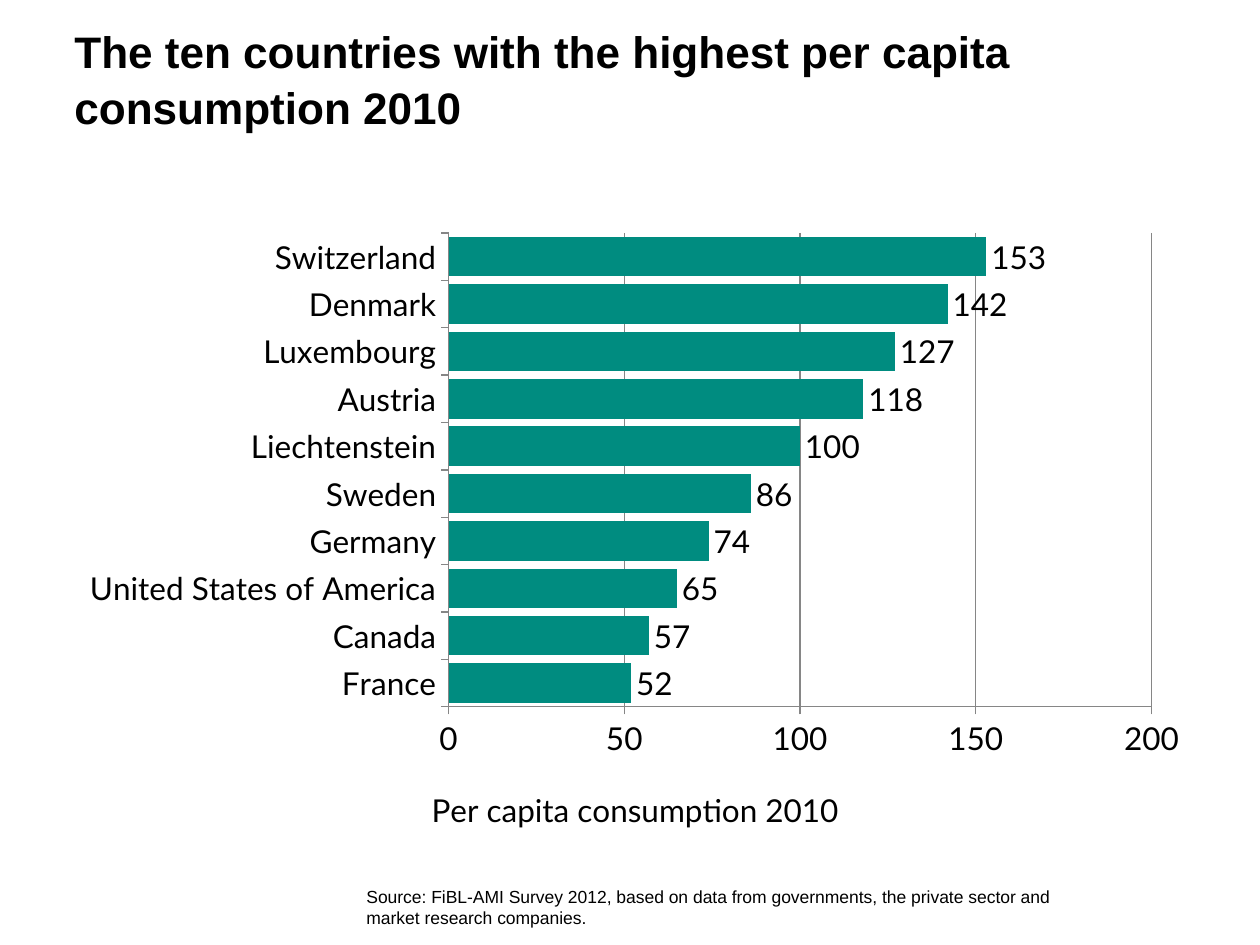
from dataclasses import dataclass

from lxml.etree import SubElement
from pptx import Presentation
from pptx.chart.data import CategoryChartData
from pptx.dml.color import RGBColor
from pptx.enum.chart import XL_CHART_TYPE, XL_LABEL_POSITION, XL_TICK_MARK
from pptx.enum.text import MSO_ANCHOR, MSO_AUTO_SIZE, PP_ALIGN
from pptx.oxml.ns import qn
from pptx.util import Inches, Pt

CONSUMPTION = {
    "France": 52,
    "Canada": 57,
    "United States of America": 65,
    "Germany": 74,
    "Sweden": 86,
    "Liechtenstein": 100,
    "Austria": 118,
    "Luxembourg": 127,
    "Denmark": 142,
    "Switzerland": 153,
}


@dataclass(frozen=True)
class Theme:
    """Colours, fonts and type sizes of the slide."""
    text: RGBColor = RGBColor(0, 0, 0)
    bar: RGBColor = RGBColor(0x00, 0x8C, 0x80)
    axis: RGBColor = RGBColor(0x86, 0x86, 0x86)
    body_font: str = "Arial"
    chart_font: str = "Lato"
    title_size: float = 25.2
    chart_size: float = 18
    source_size: float = 10
    hairline: float = 0.75


def apply(target, values):
    """Set every attribute named in values on target."""
    for name, value in values.items():
        setattr(target, name, value)


def place(part, **fractions):
    """Give a chart part a manual layout in fractions of the chart."""
    layout = part.find(qn("c:layout"))
    if layout is None:
        layout = SubElement(part, qn("c:layout"))
        text = part.find(qn("c:tx"))
        part.insert(0 if text is None else 1, layout)
    for child in list(layout):
        layout.remove(child)
    manual = SubElement(layout, qn("c:manualLayout"))
    for name, value in fractions.items():
        SubElement(manual, qn(f"c:{name}")).set("val", str(value))


class SlideBuilder:
    """Holds the theme and the current slide."""

    def __init__(self, slide, theme):
        self.slide, self.theme = slide, theme

    def style(self, font, name, size, bold=False):
        """Format a font in the text colour."""
        apply(font, {"name": name, "size": Pt(size), "bold": bold})
        font.color.rgb = self.theme.text

    def rule(self, line):
        """Format an axis or grid line."""
        line.color.rgb = self.theme.axis
        line.width = Pt(self.theme.hairline)

    def set_text(self, box, text, size, bold=False, **frame_format):
        """Fill a box with one left-aligned paragraph."""
        frame = box.text_frame
        apply(frame, {"word_wrap": True, **frame_format})
        para = frame.paragraphs[0]
        para.alignment = PP_ALIGN.LEFT
        span = para.add_run()
        span.text = text
        self.style(span.font, self.theme.body_font, size, bold)
        return para

    def title(self, text, left, top, width, height):
        """Move and fill the title placeholder."""
        box = self.slide.shapes.title
        apply(box, {"left": left, "top": top, "width": width, "height": height})
        para = self.set_text(
            box, text, self.theme.title_size, True,
            vertical_anchor=MSO_ANCHOR.MIDDLE, auto_size=MSO_AUTO_SIZE.NONE,
            margin_left=0, margin_top=0,
            margin_right=Inches(0.1), margin_bottom=Inches(0.05))
        para.line_spacing = 1.05

    def source(self, text, *bounds):
        """Add the source note."""
        box = self.slide.shapes.add_textbox(*bounds)
        self.set_text(box, text, self.theme.source_size,
                      auto_size=MSO_AUTO_SIZE.SHAPE_TO_FIT_TEXT)

    def bar_chart(self, values, axis_title, *bounds):
        """Add the horizontal bar chart."""
        theme = self.theme
        data = CategoryChartData(number_format="#,##0")
        data.categories = list(values)
        data.add_series("Series 1", list(values.values()))
        chart = self.slide.shapes.add_chart(
            XL_CHART_TYPE.BAR_CLUSTERED, *bounds, data).chart
        apply(chart, {"has_legend": False, "has_title": False})
        self.style(chart.font, theme.chart_font, theme.chart_size)

        plot = chart.plots[0]
        apply(plot, {"gap_width": 20, "vary_by_categories": False,
                     "has_data_labels": True})
        apply(plot.data_labels, {
            "show_value": True, "position": XL_LABEL_POSITION.OUTSIDE_END,
            "number_format": "#,##0", "number_format_is_linked": False})
        fill = plot.series[0].format.fill
        fill.solid()
        fill.fore_color.rgb = theme.bar

        amounts = chart.value_axis
        apply(amounts, {"minimum_scale": 0, "maximum_scale": 200,
                        "major_unit": 50, "has_major_gridlines": True})
        apply(amounts.tick_labels, {"number_format": "#,##0",
                                    "number_format_is_linked": False})
        for axis in (chart.category_axis, amounts):
            axis.major_tick_mark = XL_TICK_MARK.OUTSIDE
            self.rule(axis.format.line)
        self.rule(amounts.major_gridlines.format.line)

        frame = amounts.axis_title.text_frame
        frame.text = axis_title
        span = frame.paragraphs[0].runs[0]
        self.style(span.font, theme.chart_font, theme.chart_size)
        place(amounts._element.find(qn("c:title")),
              xMode="edge", yMode="edge", x=0.32, y=0.9)
        place(chart._chartSpace.chart.plotArea, layoutTarget="inner",
              xMode="edge", yMode="edge", x=0.34, y=0.02, w=0.62, h=0.76)


def main():
    """Build and save the deck."""
    deck = Presentation()
    apply(deck, {"slide_width": Inches(10), "slide_height": Inches(7.5)})
    page = SlideBuilder(deck.slides.add_slide(deck.slide_layouts[5]), Theme())
    page.title("The ten countries with the highest per capita consumption 2010",
               *map(Inches, (0.59, 0.25, 9.02, 0.78)))
    page.bar_chart(CONSUMPTION, "Per capita consumption 2010",
                   *map(Inches, (0.5, 1.75, 9, 4.95)))
    page.source("Source: FiBL-AMI Survey 2012, based on data from governments, "
                "the private sector and market research companies.",
                *map(Inches, (2.81, 6.98, 5.83, 0.44)))
    deck.save("out.pptx")


if __name__ == "__main__":
    main()
